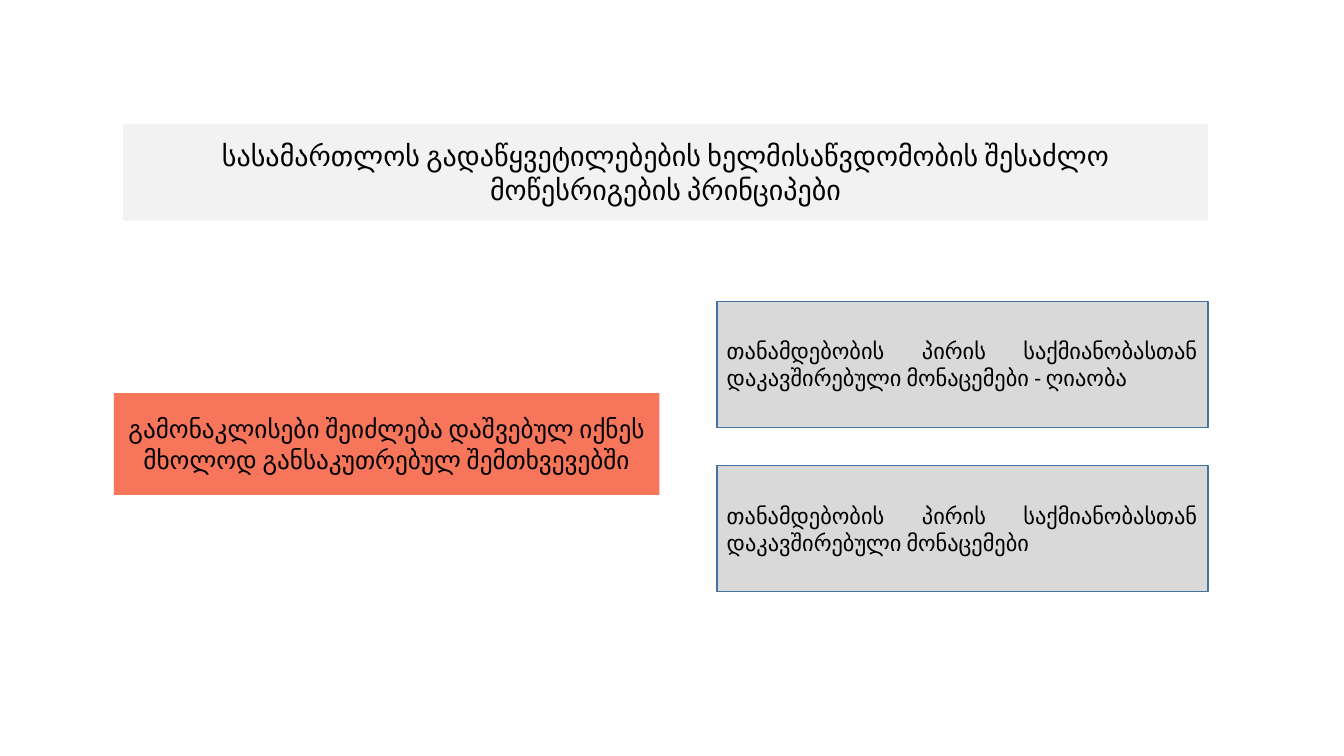
from dataclasses import dataclass

from pptx import Presentation
from pptx.dml.color import RGBColor
from pptx.enum.shapes import MSO_SHAPE as Preset
from pptx.enum.text import MSO_ANCHOR as Anchor, MSO_AUTO_SIZE as AutoSize, PP_ALIGN as Align
from pptx.util import Inches, Pt


@dataclass(frozen=True)
class Theme:
    """Colours, font and type sizes of the slide."""
    font: str = "Calibri"
    text: str = "000000"
    heading_fill: str = "F2F2F2"
    exception_fill: str = "F7755B"
    principle_fill: str = "D9D9D9"
    principle_line: str = "43739E"
    heading_size: int = 20
    exception_size: int = 18
    principle_size: int = 16


THEME = Theme()


def set_all(target, formats):
    """Set each attribute of the target from a dict of values."""
    for name, value in formats.items():
        setattr(target, name, value)


def place(panel, left, top, width, height):
    """Move and size a panel, given inches."""
    set_all(panel, {"left": Inches(left), "top": Inches(top),
                    "width": Inches(width), "height": Inches(height)})


def paint(panel, fill, line=None):
    """Fill a panel and outline it when a line colour is given."""
    panel.fill.solid()
    panel.fill.fore_color.rgb = RGBColor.from_string(fill)
    if line:
        set_all(panel.line, {"width": Pt(1)})
        panel.line.color.rgb = RGBColor.from_string(line)
    else:
        panel.line.fill.background()


def write(panel, wording, size, align):
    """Write one vertically centred paragraph in a panel."""
    frame = panel.text_frame
    set_all(frame, {"text": wording, "word_wrap": True, "auto_size": AutoSize.NONE,
                    "vertical_anchor": Anchor.MIDDLE})
    paragraph = frame.paragraphs[0]
    paragraph.alignment = align
    font = paragraph.runs[0].font
    set_all(font, {"name": THEME.font, "size": Pt(size)})
    font.color.rgb = RGBColor.from_string(THEME.text)


def add_heading(slide, wording, box):
    """Format the title placeholder as the heading band."""
    heading = slide.shapes.title
    place(heading, *box)
    paint(heading, THEME.heading_fill)
    write(heading, wording, THEME.heading_size, Align.CENTER)


def add_panel(slide, wording, box, fill, size, align, line=None):
    """Add a flat rectangle with text."""
    panel = slide.shapes.add_shape(Preset.RECTANGLE, *map(Inches, box))
    panel.shadow.inherit = False
    paint(panel, fill, line)
    write(panel, wording, size, align)


def main():
    """Build and save the slide."""
    deck = Presentation()
    set_all(deck, {"slide_width": Inches(13.33), "slide_height": Inches(7.5)})
    slide = deck.slides.add_slide(deck.slide_layouts[5])

    add_heading(slide, "სასამართლოს გადაწყვეტილებების ხელმისაწვდომობის შესაძლო "
                "მოწესრიგების პრინციპები", (1.22, 1.23, 10.76, 0.96))
    add_panel(slide, "გამონაკლისები შეიძლება დაშვებულ იქნეს მხოლოდ განსაკუთრებულ "
              "შემთხვევებში", (1.13, 3.9, 5.41, 1.01),
              THEME.exception_fill, THEME.exception_size, Align.CENTER)

    official_data = "თანამდებობის პირის საქმიანობასთან დაკავშირებული მონაცემები"
    principles = (f"{official_data} - ღიაობა", official_data)
    first_top, pitch = 2.99, 1.63
    for row, principle in enumerate(principles):
        add_panel(slide, principle, (7.11, first_top + row * pitch, 4.87, 1.25),
                  THEME.principle_fill, THEME.principle_size, Align.JUSTIFY,
                  THEME.principle_line)

    deck.save("out.pptx")


if __name__ == "__main__":
    main()
